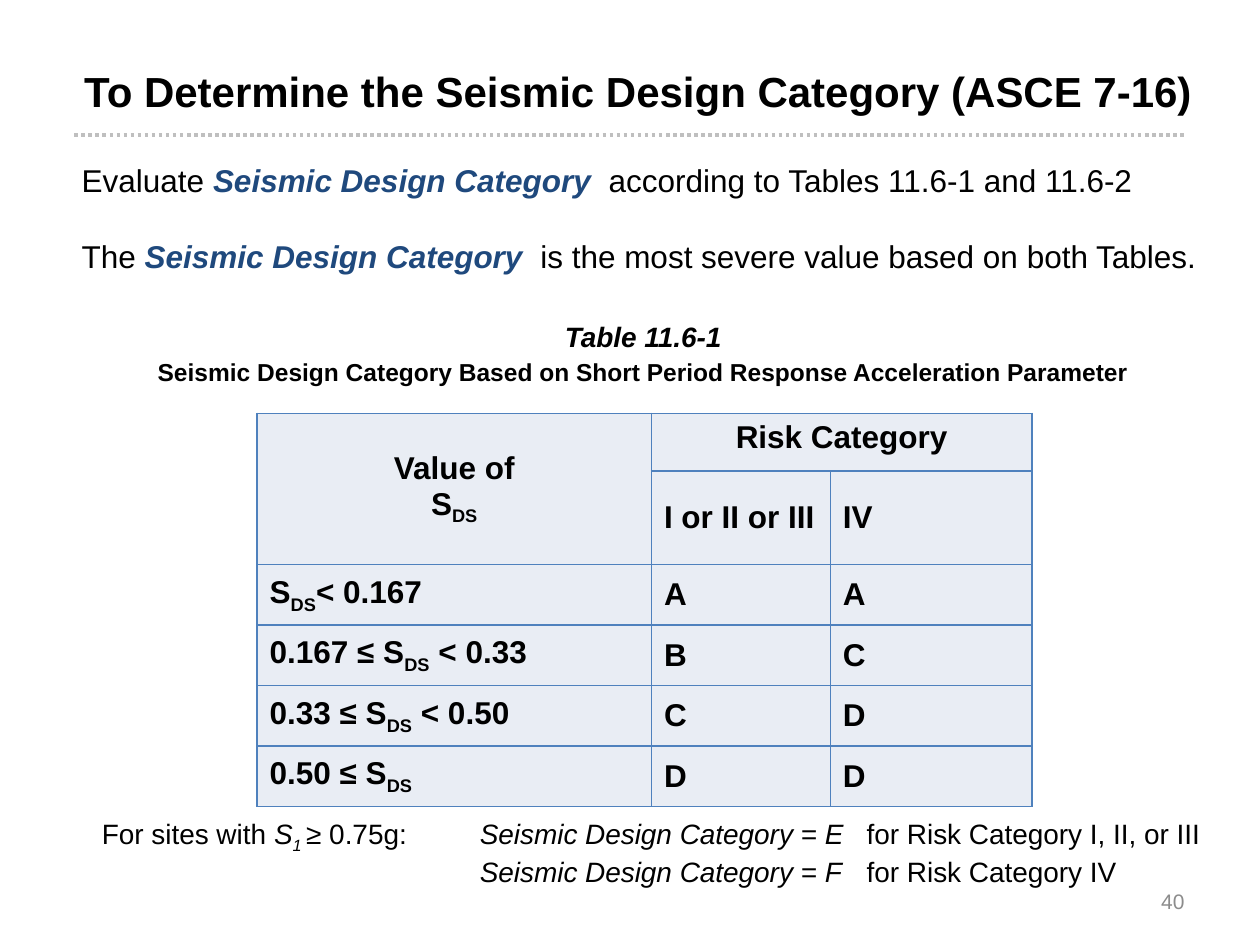
from lxml.etree import SubElement
from pptx import Presentation
from pptx.dml.color import RGBColor
from pptx.enum.dml import MSO_LINE
from pptx.enum.shapes import MSO_CONNECTOR, MSO_SHAPE
from pptx.enum.text import MSO_ANCHOR, PP_ALIGN
from pptx.oxml.ns import qn
from pptx.util import Inches, Pt

# Content: a paragraph is a list of (text, style) runs
# Styles: b bold, i italic, s subscript, a accent colour
TITLE = "To Determine the Seismic Design Category (ASCE 7-16)"
PAGE = "40"
TERM = ("Seismic Design Category ", "bia")
INTRO = [
    [("Evaluate ", ""), TERM, (" according to Tables 11.6-1 and 11.6-2", "")],
    [("The ", ""), TERM, (" is the most severe value based on both Tables.", "")],
]
CAPTION = [
    ("Table 11.6-1", "bi", 16),
    ("Seismic Design Category Based on Short Period Response Acceleration Parameter", "b", 14),
]
CORNER = [[("Value of", "b")], [("S", "b"), ("DS", "bs")]]
SPAN_HEAD = "Risk Category"
HEADS = ["I or II or III", "IV"]
# Text before S_DS, text after it, category for each risk group
LIMITS = [
    ("", "< 0.167", "A", "A"),
    ("0.167 ≤ ", " < 0.33", "B", "C"),
    ("0.33 ≤ ", " < 0.50", "C", "D"),
    ("0.50 ≤ ", "", "D", "D"),
]
NOTES = [
    [("For sites with ", ""), ("S", "i"), ("1 ", "is"), ("≥ 0.75g:", ""),
     ("\tSeismic Design Category = E", "i"), ("\tfor Risk Category I, II, or III", "")],
    [("\tSeismic Design Category = F", "i"), ("\tfor Risk Category IV", "")],
]
NOTE_TABS = [3, 6.07]
COLS = [3.13, 1.42, 1.6]
ROWS = [0.46, 0.74] + [0.48] * len(LIMITS)
INK, ACCENT, GREY = "000000", "1F497D", "8C8C8C"
CELL, BORDER, DOTS, WHITE = "E9EDF4", "4F81BD", "BFBFBF", "FFFFFF"


def rgb(color):
    return RGBColor.from_string(color)


def write(p, runs, size, color=INK, align=PP_ALIGN.LEFT):
    p.alignment = align
    for text, style in runs:
        r = p.add_run()
        r.text = text
        r.font.name, r.font.size = "Arial", Pt(size)
        r.font.bold, r.font.italic = "b" in style, "i" in style
        r.font.color.rgb = rgb(ACCENT if "a" in style else color)
        if "s" in style:
            r._r.get_or_add_rPr().set("baseline", "-25000")


def paragraphs(tf, count):
    return [tf.paragraphs[0]] + [tf.add_paragraph() for _ in range(count - 1)]


def text_box(s, x, y, w, h):
    tf = s.shapes.add_textbox(Inches(x), Inches(y), Inches(w), Inches(h)).text_frame
    tf.word_wrap = True
    return tf


def fill_cell(cell, paras, align=PP_ALIGN.LEFT, anchor=MSO_ANCHOR.MIDDLE):
    cell.vertical_anchor = anchor
    for p, runs in zip(paragraphs(cell.text_frame, len(paras)), paras):
        write(p, runs, 18, align=align)


def style_cell(cell):
    tcPr = cell._tc.get_or_add_tcPr()
    for side in ("lnL", "lnR", "lnT", "lnB"):
        ln = SubElement(tcPr, qn("a:" + side), w=str(Pt(1)))
        SubElement(SubElement(ln, qn("a:solidFill")), qn("a:srgbClr"), val=BORDER)
    cell.fill.solid()
    cell.fill.fore_color.rgb = rgb(CELL)


prs = Presentation()
prs.slide_width, prs.slide_height = Inches(10), Inches(7.5)
s = prs.slides.add_slide(prs.slide_layouts[6])

# Title with dotted rule
rule = s.shapes.add_connector(MSO_CONNECTOR.STRAIGHT, Inches(0.59), Inches(1.07),
                              Inches(9.41), Inches(1.07))
rule.line.color.rgb = rgb(DOTS)
rule.line.width = Pt(2)
rule.line.dash_style = MSO_LINE.ROUND_DOT
SubElement(rule._element.spPr, qn("a:effectLst"))
write(text_box(s, 0.57, 0.47, 9.08, 0.68).paragraphs[0], [(TITLE, "b")], 24)

# Page number
tf = text_box(s, 7.17, 6.95, 2.33, 0.4)
tf.vertical_anchor = MSO_ANCHOR.MIDDLE
write(tf.paragraphs[0], [(PAGE, "")], 12, GREY, PP_ALIGN.RIGHT)

# Introduction
tf = text_box(s, 0.55, 1.23, 9.26, 1.01)
for i, (p, runs) in enumerate(zip(paragraphs(tf, len(INTRO)), INTRO)):
    write(p, runs, 18)
    if i:
        p.space_before = Pt(22)

# Table caption
sp = s.shapes.add_shape(MSO_SHAPE.RECTANGLE, Inches(1.01), Inches(2.49),
                        Inches(8.19), Inches(0.64))
sp.shadow.inherit = False
sp.fill.solid()
sp.fill.fore_color.rgb = rgb(WHITE)
sp.line.color.rgb = rgb(WHITE)
sp.line.width = Pt(1.5)
tf = sp.text_frame
tf.vertical_anchor = MSO_ANCHOR.TOP
for p, (text, style, size) in zip(paragraphs(tf, len(CAPTION)), CAPTION):
    write(p, [(text, style)], size, align=PP_ALIGN.CENTER)
p.space_before = Pt(2)

# Category table
tbl = s.shapes.add_table(len(ROWS), len(COLS), Inches(2.04), Inches(3.28),
                         Inches(sum(COLS)), Inches(sum(ROWS))).table
for col, w in zip(tbl.columns, COLS):
    col.width = Inches(w)
for row, h in zip(tbl.rows, ROWS):
    row.height = Inches(h)
for cell in tbl.iter_cells():
    style_cell(cell)
tbl.cell(0, 0).merge(tbl.cell(1, 0))
tbl.cell(0, 1).merge(tbl.cell(0, 2))
fill_cell(tbl.cell(0, 0), CORNER, PP_ALIGN.CENTER)
fill_cell(tbl.cell(0, 1), [[(SPAN_HEAD, "b")]], PP_ALIGN.CENTER, MSO_ANCHOR.TOP)
for c, head in enumerate(HEADS, 1):
    fill_cell(tbl.cell(1, c), [[(head, "b")]])
for r, (before, after, *groups) in enumerate(LIMITS, 2):
    runs = [(before + "S", "b"), ("DS", "bs")] + ([(after, "b")] if after else [])
    fill_cell(tbl.cell(r, 0), [runs])
    for c, group in enumerate(groups, 1):
        fill_cell(tbl.cell(r, c), [[(group, "b")]])

# Notes aligned on tab stops
tf = text_box(s, 0.71, 6.43, 9.1, 0.64)
for p, runs in zip(paragraphs(tf, len(NOTES)), NOTES):
    tabs = SubElement(p._p.get_or_add_pPr(), qn("a:tabLst"))
    for pos in NOTE_TABS:
        SubElement(tabs, qn("a:tab"), pos=str(Inches(pos)), algn="l")
    write(p, runs, 16)

prs.save("out.pptx")
